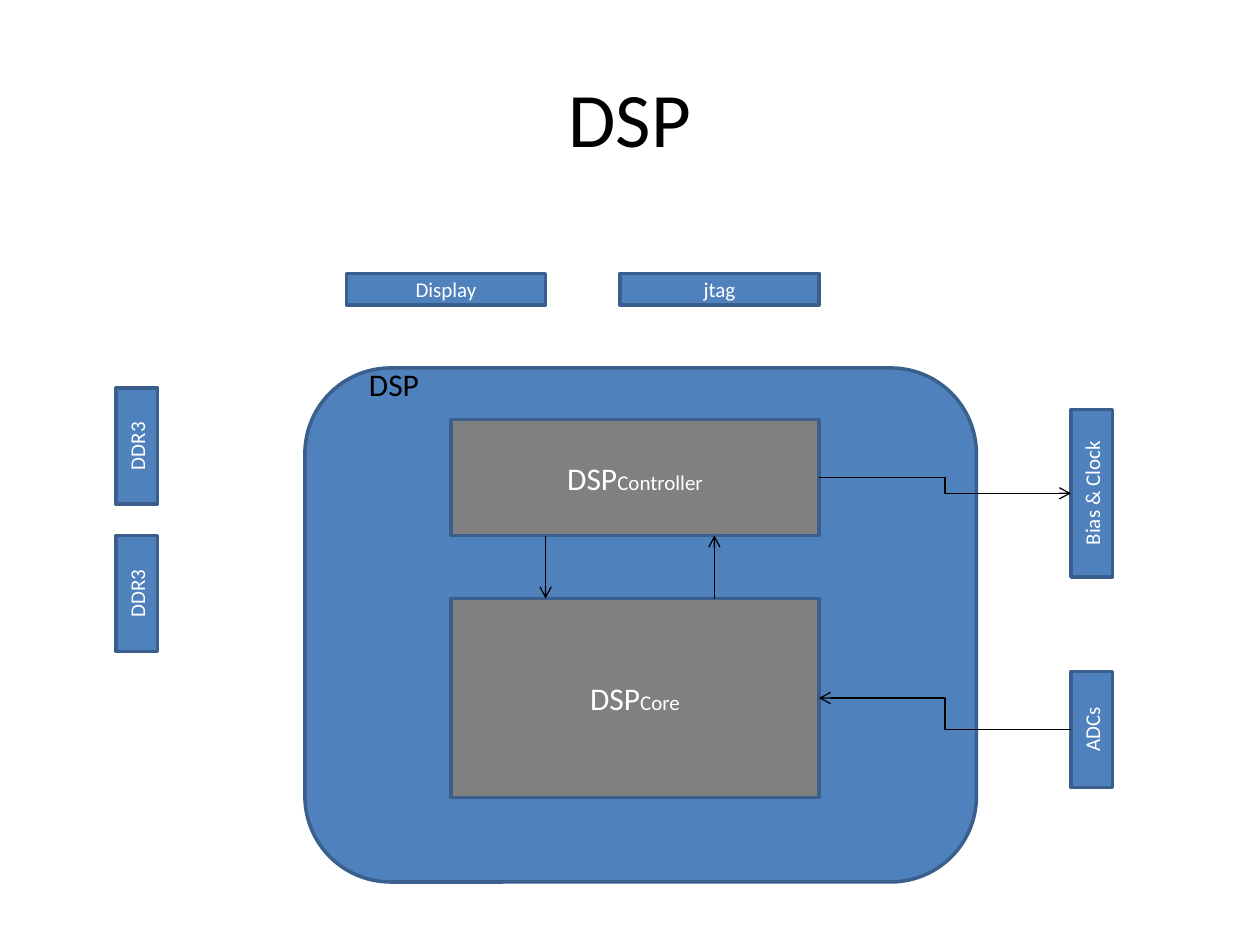
"""Build the DSP block diagram slide."""
from lxml import etree
from pptx import Presentation
from pptx.dml.color import RGBColor
from pptx.enum.shapes import MSO_CONNECTOR, MSO_SHAPE
from pptx.enum.text import MSO_ANCHOR, MSO_AUTO_SIZE, PP_ALIGN
from pptx.oxml.ns import qn
from pptx.util import Inches, Pt

RECT, ROUNDED = MSO_SHAPE.RECTANGLE, MSO_SHAPE.ROUNDED_RECTANGLE
STRAIGHT, ELBOW = MSO_CONNECTOR.STRAIGHT, MSO_CONNECTOR.ELBOW
MIDDLE, TOP = MSO_ANCHOR.MIDDLE, MSO_ANCHOR.TOP
CENTER, LEFT = PP_ALIGN.CENTER, PP_ALIGN.LEFT
FIT_SHAPE = MSO_AUTO_SIZE.SHAPE_TO_FIT_TEXT

BLUE = RGBColor(0x4F, 0x81, 0xBD)
NAVY = RGBColor(0x3A, 0x5F, 0x8C)
GRAY = RGBColor(0x80, 0x80, 0x80)
WHITE = RGBColor(0xFF, 0xFF, 0xFF)
BLACK = RGBColor(0, 0, 0)

SIDE_W, SIDE_H = 0.33, 0.92
PORT_W, PORT_H = 1.58, 0.25
UNIT_X, UNIT_W = 3.58, 2.92


def write(shape, text, size=12, color=WHITE, align=CENTER, anchor=MIDDLE, wrap=True):
    frame = shape.text_frame
    frame.word_wrap = wrap
    frame.vertical_anchor = anchor
    paragraph = frame.paragraphs[0]
    paragraph.alignment = align
    run = paragraph.add_run()
    run.text = text
    run.font.name = "Calibri"
    run.font.size = Pt(size)
    run.font.color.rgb = color


def add_block(kind, left, top, width, height, fill):
    block = slide.shapes.add_shape(kind, Inches(left), Inches(top), Inches(width), Inches(height))
    block.shadow.inherit = False
    block.fill.solid()
    block.fill.fore_color.rgb = fill
    block.line.color.rgb = NAVY
    block.line.width = Pt(2)
    return block


prs = Presentation()
prs.slide_width, prs.slide_height = Inches(10), Inches(7.5)
slide = prs.slides.add_slide(prs.slide_layouts[6])

title = slide.shapes.add_textbox(Inches(0.5), Inches(0.3), Inches(9), Inches(1.25))
write(title, "DSP", size=44, color=BLACK)

add_block(ROUNDED, 2.42, 2.92, 5.33, 4.08, BLUE)

units = {}
for name, top, height in [("Controller", 3.33, 0.92), ("Core", 4.75, 1.58)]:
    units[name] = add_block(RECT, UNIT_X, top, UNIT_W, height, GRAY)
    write(units[name], "DSP", size=18)
    write(units[name], name)

peripherals = {}
for name, left, top, height in [
    ("DDR3", 0.92, 3.08, SIDE_H),
    ("DDR3", 0.92, 4.25, SIDE_H),
    ("Bias & Clock", 8.5, 3.25, 1.33),
    ("ADCs", 8.5, 5.33, SIDE_H),
]:
    peripherals[name] = add_block(RECT, left, top, SIDE_W, height, BLUE)
    write(peripherals[name], name)
    peripherals[name].text_frame._txBody.bodyPr.set("vert", "vert270")

for name, left in [("Display", 2.75), ("jtag", 4.92)]:
    write(add_block(RECT, left, 2.17, PORT_W, PORT_H, BLUE), name)

dsp_label = slide.shapes.add_textbox(Inches(2.83), Inches(2.85), Inches(0.6), Inches(0.4))
write(dsp_label, "DSP", size=18, color=BLACK, align=LEFT, anchor=TOP, wrap=False)
dsp_label.text_frame.auto_size = FIT_SHAPE

arrows = []
for kind, *ends in [
    (STRAIGHT, 4.33, 4.25, 4.33, 4.75),
    (STRAIGHT, 5.67, 4.75, 5.67, 4.25),
    (ELBOW, 8.5, 5.79, 6.5, 5.54),
    (ELBOW, 6.5, 3.79, 8.5, 3.92),
]:
    arrow = slide.shapes.add_connector(kind, *map(Inches, ends))
    arrow.line.color.rgb = BLACK
    arrow.line.width = Pt(0.75)
    etree.SubElement(arrow.line._get_or_add_ln(), qn("a:tailEnd"), type="arrow")
    etree.SubElement(arrow._element.spPr, qn("a:effectLst"))
    arrows.append(arrow)

adc_link, bias_link = arrows[2:]
adc_link.begin_connect(peripherals["ADCs"], 1)
adc_link.end_connect(units["Core"], 3)
bias_link.begin_connect(units["Controller"], 3)
bias_link.end_connect(peripherals["Bias & Clock"], 1)

prs.save("out.pptx")
